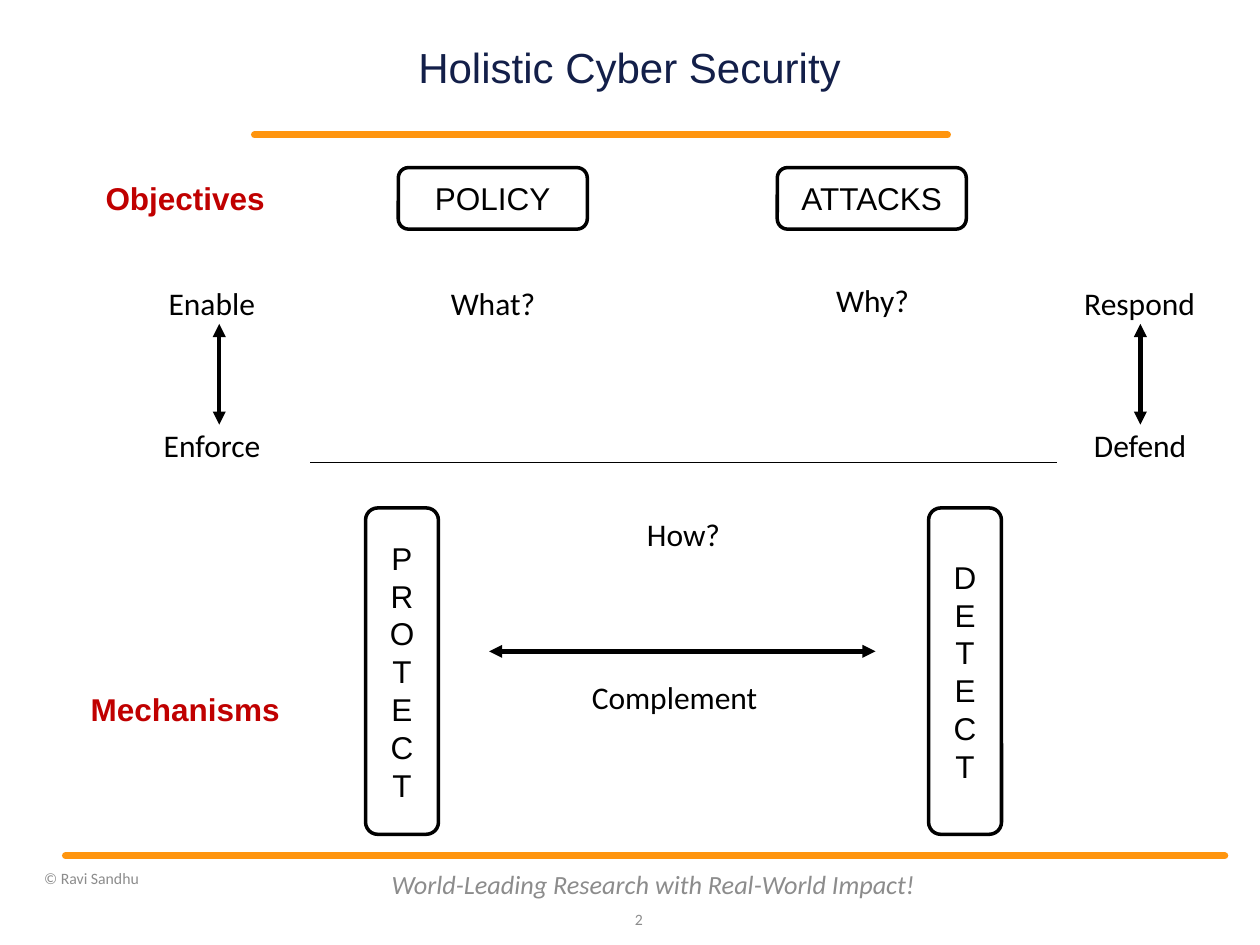
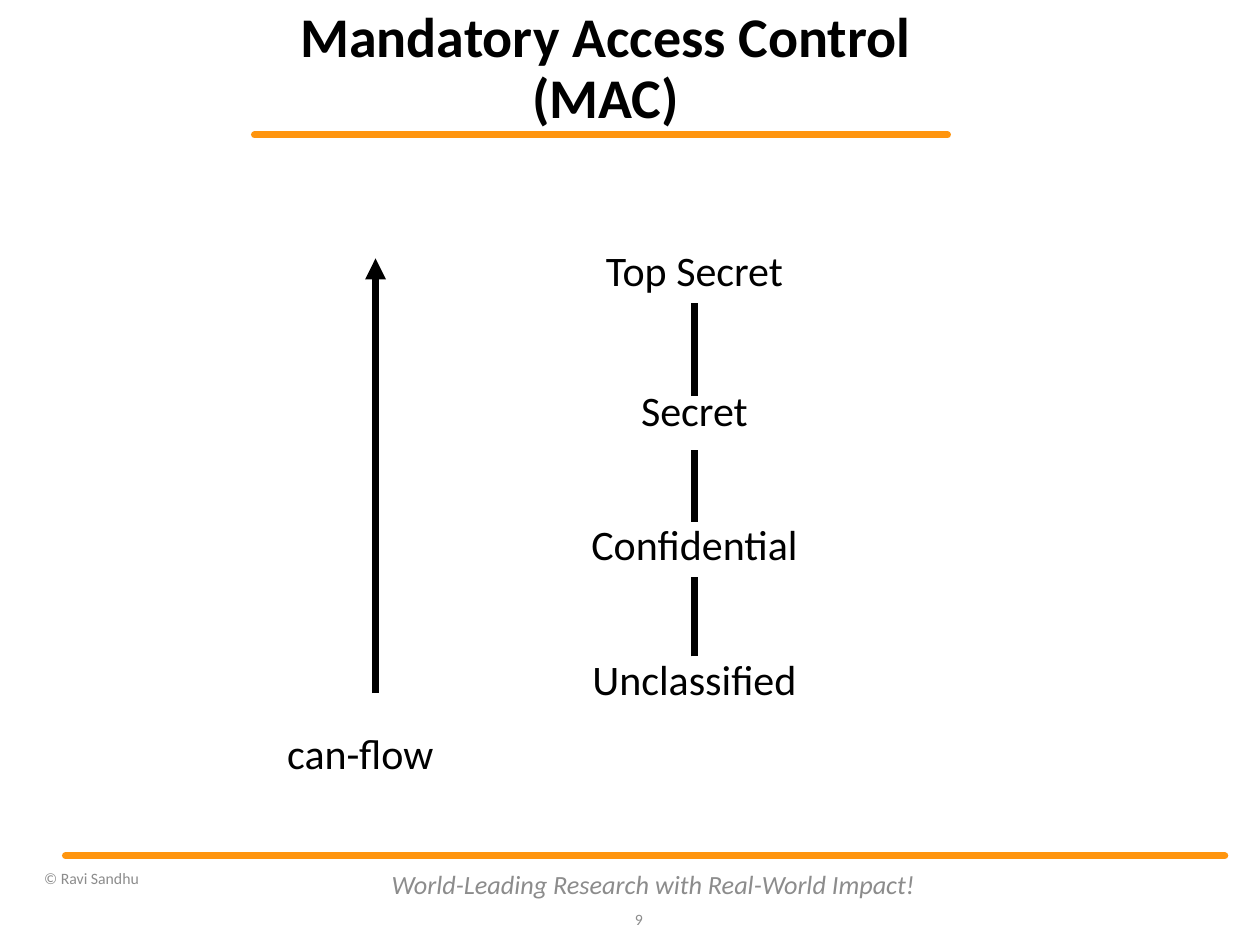
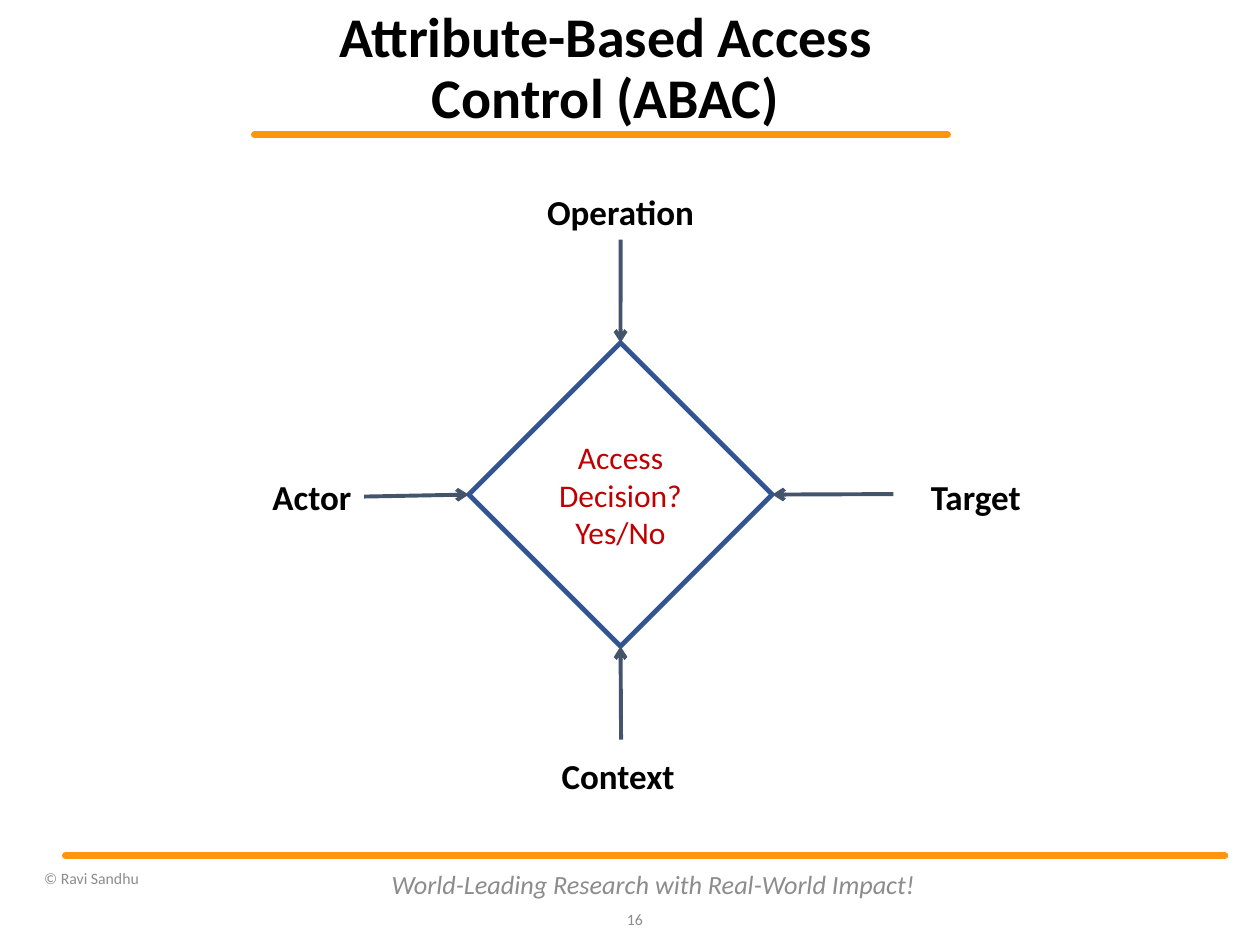
from lxml.etree import SubElement
from pptx import Presentation
from pptx.dml.color import RGBColor
from pptx.enum.shapes import MSO_CONNECTOR, MSO_SHAPE
from pptx.enum.text import MSO_ANCHOR, MSO_AUTO_SIZE, PP_ALIGN
from pptx.oxml.ns import qn
from pptx.util import Cm, Pt

ORANGE = RGBColor(0xFF, 0x95, 0x0E)
GREY = RGBColor(0x8C, 0x8C, 0x8C)
NAVY = RGBColor(0x13, 0x1F, 0x49)
BLACK = RGBColor(0, 0, 0)
WHITE = RGBColor(0xFF, 0xFF, 0xFF)
RED = RGBColor(0xC0, 0, 0)
BLUE = RGBColor(0x32, 0x54, 0x91)
SLATE = RGBColor(0x44, 0x54, 0x6A)

TOP, LEFT, BOTTOM, RIGHT = range(4)


def write(sp, text, size, color=BLACK, name="Calibri", bold=False, italic=False,
          align=PP_ALIGN.CENTER, spacing=None):
    tf = sp.text_frame
    tf.text = text
    for p in tf.paragraphs:
        p.alignment = align
        p.line_spacing = spacing
        p.font.size = Pt(size)
        p.font.name = name
        p.font.bold = bold
        p.font.italic = italic
        p.font.color.rgb = color


def add_text(s, text, x, y, w, h, size, wrap=True, anchor=MSO_ANCHOR.TOP,
             insets=(0.25, 0.13), **style):
    sp = s.shapes.add_textbox(Cm(x), Cm(y), Cm(w), Cm(h))
    tf = sp.text_frame
    tf.word_wrap = wrap
    tf.vertical_anchor = anchor
    tf.margin_left = tf.margin_right = Cm(insets[0])
    tf.margin_top = tf.margin_bottom = Cm(insets[1])
    write(sp, text, size, **style)
    return sp


def add_line(s, x1, y1, x2, y2, width, color=BLACK, head=None, tail=None, cap=None):
    cxn = s.shapes.add_connector(MSO_CONNECTOR.STRAIGHT, Cm(x1), Cm(y1), Cm(x2), Cm(y2))
    cxn.line.width = Pt(width)
    cxn.line.color.rgb = color
    sp_pr = cxn._element.spPr
    ln = sp_pr.find(qn("a:ln"))
    if cap:
        ln.set("cap", cap)
    for tag, kind in (("a:headEnd", head), ("a:tailEnd", tail)):
        if kind:
            SubElement(ln, qn(tag), type=kind)
    SubElement(sp_pr, qn("a:effectLst"))
    return cxn


def add_box(s, kind, text, x, y, w, h, line=None, width=2, fill=WHITE, wrap=False, **style):
    sp = s.shapes.add_shape(kind, Cm(x), Cm(y), Cm(w), Cm(h))
    sp.shadow.inherit = False
    if fill is None:
        sp.fill.background()
    else:
        sp.fill.solid()
        sp.fill.fore_color.rgb = fill
    if line is None:
        sp.line.fill.background()
    else:
        sp.line.color.rgb = line
        sp.line.width = Pt(width)
    sp.text_frame.word_wrap = wrap
    sp.text_frame.vertical_anchor = MSO_ANCHOR.MIDDLE
    write(sp, text, 18, **style)
    return sp


def add_slide(prs, title, number, x=5.54, size=32, color=BLACK, name="Calibri", bold=True):
    s = prs.slides.add_slide(prs.slide_layouts[5])
    sp = s.shapes.title
    sp.left, sp.top, sp.width, sp.height = Cm(x), Cm(0.76), Cm(13.34), Cm(1.3)
    tf = sp.text_frame
    tf.margin_left = tf.margin_right = tf.margin_top = tf.margin_bottom = 0
    tf.word_wrap = True
    tf.auto_size = MSO_AUTO_SIZE.NONE
    tf.vertical_anchor = MSO_ANCHOR.MIDDLE
    write(sp, title, size, color, name, bold, spacing=0.9)
    for x1, x2, y in ((5.13, 19.1, 2.72), (1.32, 24.69, 17.25)):
        add_line(s, x1, y, x2, y, 4, ORANGE, cap="rnd")
    footer = dict(color=GREY, anchor=MSO_ANCHOR.MIDDLE)
    add_text(s, "World-Leading Research with Real-World Impact!", 7.62, 17.32, 11.1, 1.02,
             15, italic=True, **footer)
    add_text(s, number, 12.19, 18.03, 1.02, 1.02, 9, align=PP_ALIGN.RIGHT, **footer)
    add_text(s, "© Ravi Sandhu", 0.64, 17.25, 6.99, 0.91, 9, align=PP_ALIGN.LEFT, **footer)
    return s


def build_holistic(prs):
    s = add_slide(prs, "Holistic Cyber Security", "2", 6.02, 24, NAVY, "Arial", False)
    for text, x in (("PROTECT", 7.37), ("DETECT", 18.72)):
        pillar = add_box(s, MSO_SHAPE.ROUNDED_RECTANGLE, text, x, 10.24, 1.47, 6.58,
                         BLACK, name="Arial")
        pillar.text_frame._txBody.bodyPr.set("vert", "wordArtVert")
    for text, x in (("POLICY", 8.03), ("ATTACKS", 15.67)):
        add_box(s, MSO_SHAPE.ROUNDED_RECTANGLE, text, x, 3.38, 3.81, 1.24, BLACK, name="Arial")
    for text, y in (("Objectives", 3.38), ("Mechanisms", 13.67)):
        add_box(s, MSO_SHAPE.ROUNDED_RECTANGLE, text, 1.83, y, 3.81, 1.24,
                color=RED, name="Arial", bold=True)
    add_line(s, 6.25, 9.32, 21.31, 9.32, 0.75)
    for x1, y1, x2, y2 in ((9.86, 13.13, 17.65, 13.13),
                           (4.42, 8.56, 4.42, 6.53),
                           (22.99, 8.56, 22.99, 6.53)):
        add_line(s, x1, y1, x2, y2, 2.5, head="triangle", tail="triangle")
    for text, x, y, w, align in (
        ("Complement", 11.68, 13.54, 4.14, PP_ALIGN.LEFT),
        ("How?", 12.7, 10.26, 2.16, PP_ALIGN.CENTER),
        ("What?", 8.76, 5.59, 2.36, PP_ALIGN.CENTER),
        ("Why?", 16.51, 5.54, 2.16, PP_ALIGN.CENTER),
        ("Enforce", 3.05, 8.46, 2.72, PP_ALIGN.LEFT),
        ("Enable", 3.15, 5.59, 2.51, PP_ALIGN.LEFT),
        ("Defend", 21.69, 8.46, 2.59, PP_ALIGN.CENTER),
        ("Respond", 21.44, 5.59, 3.07, PP_ALIGN.CENTER),
    ):
        add_text(s, text, x, y, w, 1.02, 18, wrap=False, align=align)


def build_mac(prs):
    s = add_slide(prs, "Mandatory Access Control (MAC)", "9")
    label = dict(size=24, wrap=False, insets=(0.18, 0.08), spacing=0.87)
    axis = 14
    levels = [
        add_text(s, text, axis - w / 2, y, w, 1.04, **label)
        for text, y, w in (("Unclassified", 13.23, 4.98), ("Confidential", 10.52, 4.88),
                           ("Secret", 7.82, 2.82), ("Top Secret", 4.98, 4.44))
    ]
    for level, y1, y2 in zip(levels, (13.23, 10.52), (11.63, 9.07)):
        add_line(s, axis, y1, axis, y2, 4).begin_connect(level, TOP)
    add_line(s, axis, 7.98, axis, 6.1, 4)
    add_line(s, 7.57, 13.97, 7.57, 5.21, 4, tail="triangle")
    add_text(s, "can-flow", 5.61, 14.73, 3.94, 1.17, align=PP_ALIGN.LEFT, **label)


def build_abac(prs):
    s = add_slide(prs, "Attribute-Based Access Control (ABAC)", "16")
    decision = add_box(s, MSO_SHAPE.DIAMOND, "Access\nDecision?\nYes/No", 9.45, 6.91, 6.12, 6.12,
                       BLUE, 2.75, fill=None, wrap=True, color=RED)
    for text, x, y, w, start_x, start_y, side in (
        ("Actor", 5.11, 9.45, 2.36, 7.34, 10.01, LEFT),
        ("Target", 18.49, 9.45, 2.36, 18.01, 9.96, RIGHT),
        ("Operation", 10.72, 3.71, 3.58, 12.51, 4.83, TOP),
        ("Context", 10.67, 15.09, 3.58, 12.52, 14.91, BOTTOM),
    ):
        label = add_text(s, text, x, y, w, 1.12, 20, bold=True)
        arrow = add_line(s, start_x, start_y, 12.51, 9.97, 2.25, SLATE, tail="arrow")
        if side == TOP:
            arrow.begin_connect(label, BOTTOM)
        arrow.end_connect(decision, side)


def main():
    prs = Presentation()
    prs.slide_width, prs.slide_height = Cm(25.4), Cm(19.05)
    build_holistic(prs)
    build_mac(prs)
    build_abac(prs)
    prs.save("out.pptx")


if __name__ == "__main__":
    main()
